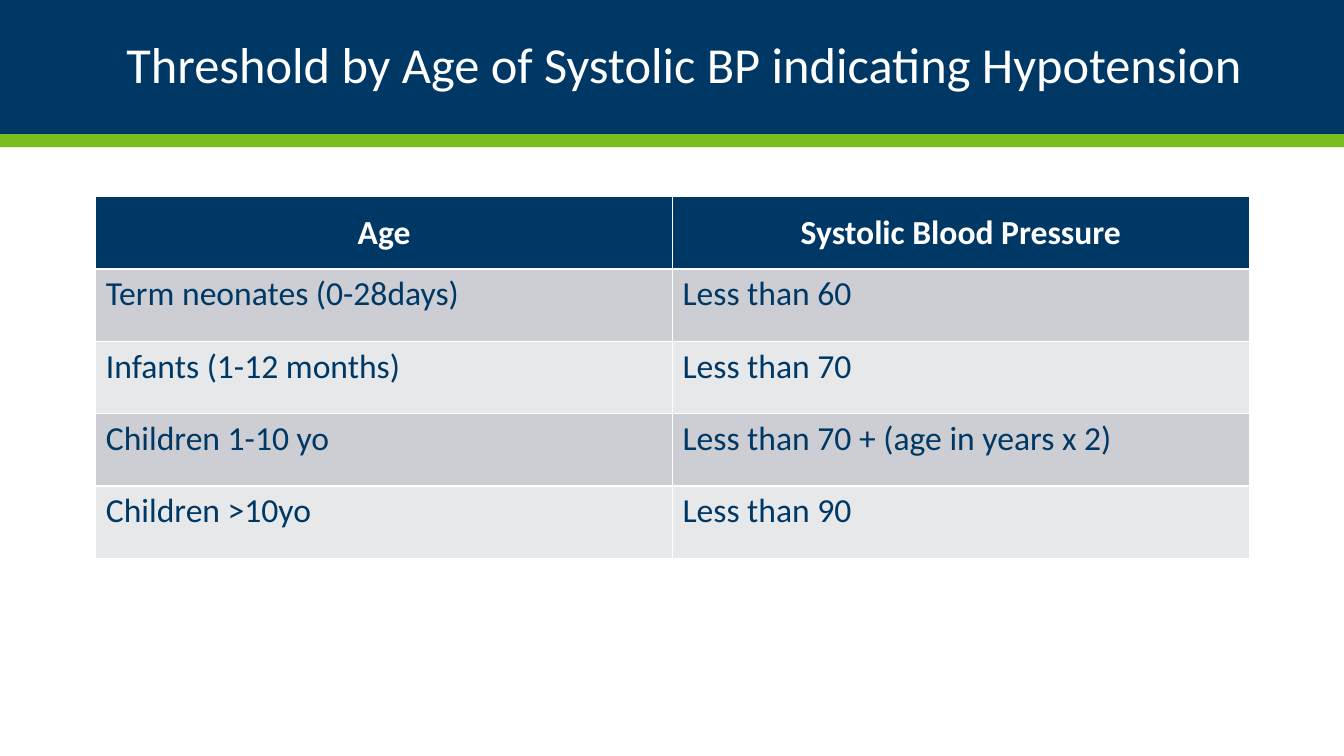
from pptx import Presentation
from pptx.dml.color import RGBColor
from pptx.enum.shapes import MSO_SHAPE
from pptx.enum.text import MSO_ANCHOR, MSO_AUTO_SIZE, PP_ALIGN
from pptx.util import Inches, Pt

NAVY = RGBColor(0x00, 0x38, 0x65)
GREEN = RGBColor(0x78, 0xBE, 0x21)
WHITE = RGBColor(0xFF, 0xFF, 0xFF)
DARK_BAND = RGBColor(0xCC, 0xCE, 0xD3)
LIGHT_BAND = RGBColor(0xE7, 0xE8, 0xEA)

RECTANGLE = MSO_SHAPE.RECTANGLE
MIDDLE, TOP = MSO_ANCHOR.MIDDLE, MSO_ANCHOR.TOP
LEFT, CENTER, RIGHT = PP_ALIGN.LEFT, PP_ALIGN.CENTER, PP_ALIGN.RIGHT
NO_AUTOFIT = MSO_AUTO_SIZE.NONE

PAGE_WIDTH, PAGE_HEIGHT = 13.33, 7.5
TITLE_ONLY_LAYOUT = 5

THRESHOLDS = [
    ("Age", "Systolic Blood Pressure"),
    ("Term neonates (0-28days)", "Less than 60"),
    ("Infants (1-12 months)", "Less than 70"),
    ("Children 1-10 yo", "Less than 70 + (age in years x 2)"),
    ("Children >10yo", "Less than 90"),
]


class SlideBuilder:
    """Holds the text style and the slide being built."""

    font_name = "Calibri"
    title_size = 36
    table_size = 24

    def __init__(self, page):
        self.page = page

    def style(self, paragraph, size, color, alignment, bold=False):
        paragraph.alignment = alignment
        font = paragraph.font
        font.name = self.font_name
        font.size = Pt(size)
        font.bold = bold
        font.color.rgb = color

    def band(self, top, height, color):
        """Add a full-width horizontal band."""
        band = self.page.shapes.add_shape(
            RECTANGLE, 0, Inches(top), Inches(PAGE_WIDTH), Inches(height))
        band.shadow.inherit = False
        band.fill.solid()
        band.fill.fore_color.rgb = color
        band.line.fill.background()

    def title(self, text, left, top, width, height):
        """Fill the title placeholder and bring it in front of the bands."""
        title = self.page.shapes.title
        title.left, title.top = Inches(left), Inches(top)
        title.width, title.height = Inches(width), Inches(height)
        frame = title.text_frame
        frame.text = text
        frame.auto_size = NO_AUTOFIT
        frame.vertical_anchor = MIDDLE
        paragraph = frame.paragraphs[0]
        paragraph.line_spacing = 0.9
        self.style(paragraph, self.title_size, WHITE, RIGHT)
        title._element.getparent().append(title._element)

    def table(self, rows, left, top, width, height):
        """Add a table with a header row and alternating row fills."""
        table = self.page.shapes.add_table(
            len(rows), len(rows[0]), Inches(left), Inches(top),
            Inches(width), Inches(height)).table
        for row_index, row in enumerate(rows):
            is_header = row_index == 0
            if is_header:
                fill = NAVY
            else:
                fill = DARK_BAND if row_index % 2 else LIGHT_BAND
            for column_index, text in enumerate(row):
                cell = table.cell(row_index, column_index)
                cell.text = text
                cell.vertical_anchor = MIDDLE if is_header else TOP
                cell.fill.solid()
                cell.fill.fore_color.rgb = fill
                self.style(cell.text_frame.paragraphs[0], self.table_size,
                           WHITE if is_header else NAVY,
                           CENTER if is_header else LEFT, is_header)


def main():
    deck = Presentation()
    deck.slide_width = Inches(PAGE_WIDTH)
    deck.slide_height = Inches(PAGE_HEIGHT)
    page = deck.slides.add_slide(deck.slide_layouts[TITLE_ONLY_LAYOUT])

    builder = SlideBuilder(page)
    builder.band(0, 1.33, NAVY)
    builder.band(1.33, 0.13, GREEN)
    builder.title("Threshold by Age of Systolic BP indicating Hypotension",
                  0.92, 0.17, 11.5, 1)
    builder.table(THRESHOLDS, 0.95, 1.95, 11.44, 3.59)
    deck.save("out.pptx")


if __name__ == "__main__":
    main()
